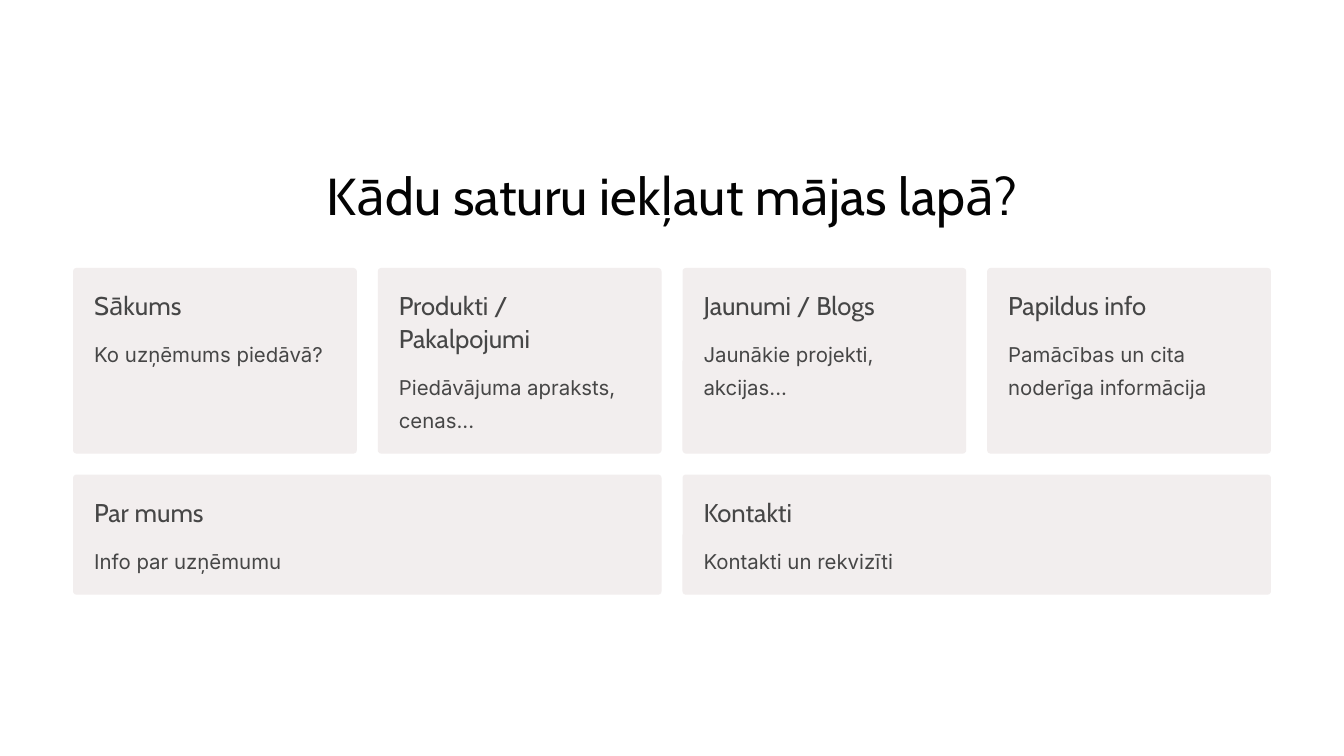
from pptx import Presentation
from pptx.dml.color import RGBColor
from pptx.enum.shapes import MSO_SHAPE
from pptx.enum.text import PP_ALIGN
from pptx.util import Inches, Pt

COLORS = {"page": "FFFFFF", "title": "030303", "card": "F2EEEE", "text": "464646"}
LEFT, SPAN, GAP, PAD = 0.87, 14.26, 0.25, 0.25
RADIUS = 0.04
HEAD_LINE, BODY_LINE = 0.39, 0.4  # line heights in inches

# Each row: top, height, cards as (heading, heading lines, body, body lines)
ROWS = [
    (3.19, 2.21, [
        ("Sākums", 1, "Ko uzņēmums piedāvā?", 1),
        ("Produkti / Pakalpojumi", 2, "Piedāvājuma apraksts, cenas...", 2),
        ("Jaunumi / Blogs", 1, "Jaunākie projekti, akcijas...", 2),
        ("Papildus info", 1, "Pamācības un cita noderīga informācija", 2),
    ]),
    (5.65, 1.43, [
        ("Par mums", 1, "Info par uzņēmumu", 1),
        ("Kontakti", 1, "Kontakti un rekvizīti", 1),
    ]),
]


def paint(fill, color):
    fill.solid()
    fill.fore_color.rgb = RGBColor.from_string(COLORS[color])


def add_text(slide, box, text, font, size, space, color="text", align=PP_ALIGN.LEFT):
    frame = slide.shapes.add_textbox(*map(Inches, box)).text_frame
    frame.word_wrap = True
    frame.margin_left = frame.margin_right = 0
    frame.margin_top = frame.margin_bottom = 0
    para = frame.paragraphs[0]
    para.alignment = align
    para.line_spacing = Pt(space)
    run = para.add_run()
    run.text = text
    run.font.name = font
    run.font.size = Pt(size)
    run.font.color.rgb = RGBColor.from_string(COLORS[color])


def add_card(slide, left, top, width, height, card):
    head, head_rows, body, body_rows = card
    # Panel
    panel = slide.shapes.add_shape(
        MSO_SHAPE.ROUNDED_RECTANGLE, *map(Inches, (left, top, width, height)))
    panel.adjustments[0] = RADIUS / min(width, height)
    panel.shadow.inherit = False
    paint(panel.fill, "card")
    panel.line.fill.background()
    # Heading, with the body below it
    x, y, inner = left + PAD, top + PAD, width - 2 * PAD
    tall = HEAD_LINE * head_rows
    add_text(slide, (x, y, inner, tall), head, "Cabin", 22, 27.5)
    add_text(slide, (x, y + tall + 0.14, inner, BODY_LINE * body_rows),
             body, "Inter", 17.5, 28.5)


def add_row(slide, top, height, cards):
    width = (SPAN - GAP * (len(cards) - 1)) / len(cards)
    for col, card in enumerate(cards):
        add_card(slide, LEFT + col * (width + GAP), top, width, height, card)


def main():
    deck = Presentation()
    deck.slide_width, deck.slide_height = Inches(16), Inches(9)
    slide = deck.slides.add_slide(deck.slide_layouts[6])
    paint(slide.background.fill, "page")

    # Title
    add_text(slide, (3.28, 1.92, 9.44, 0.78), "Kādu saturu iekļaut mājas lapā?",
             "Cabin", 44.5, 55.5, "title", PP_ALIGN.CENTER)

    # Cards
    for row in ROWS:
        add_row(slide, *row)

    deck.save("out.pptx")


if __name__ == "__main__":
    main()
